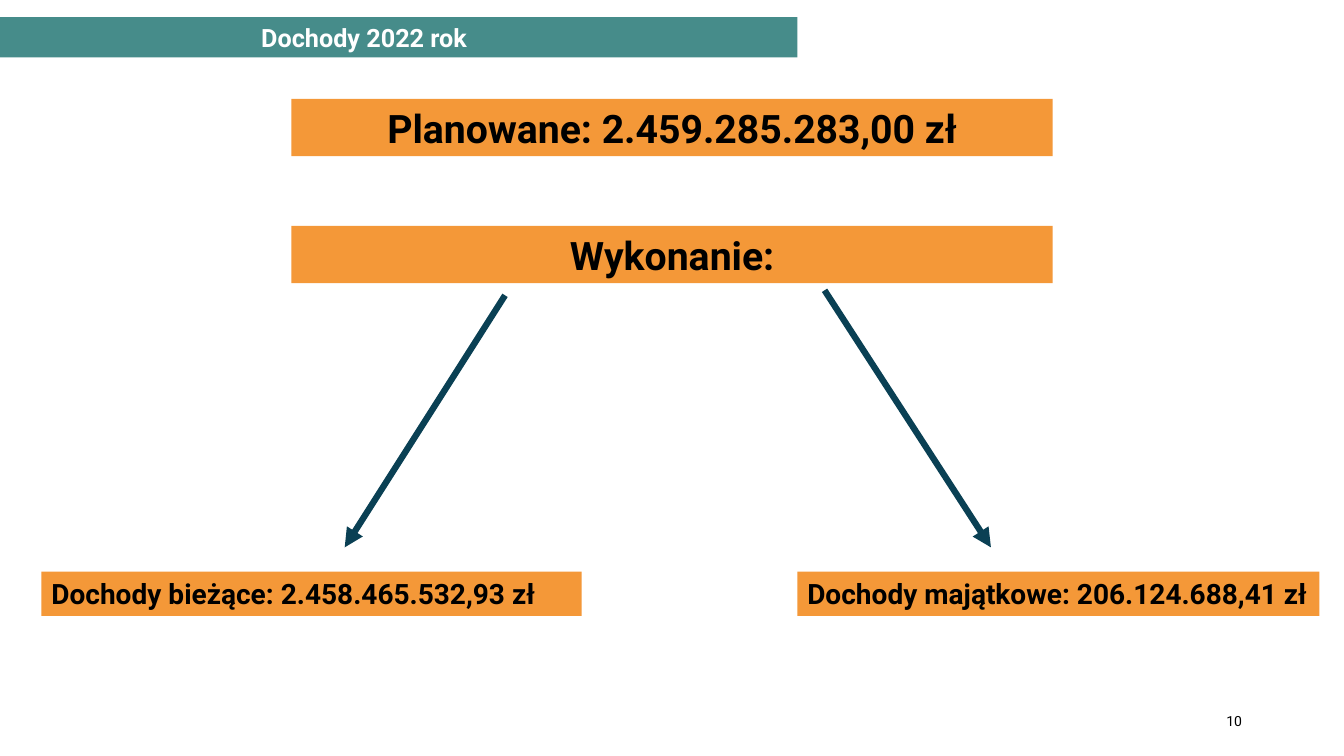
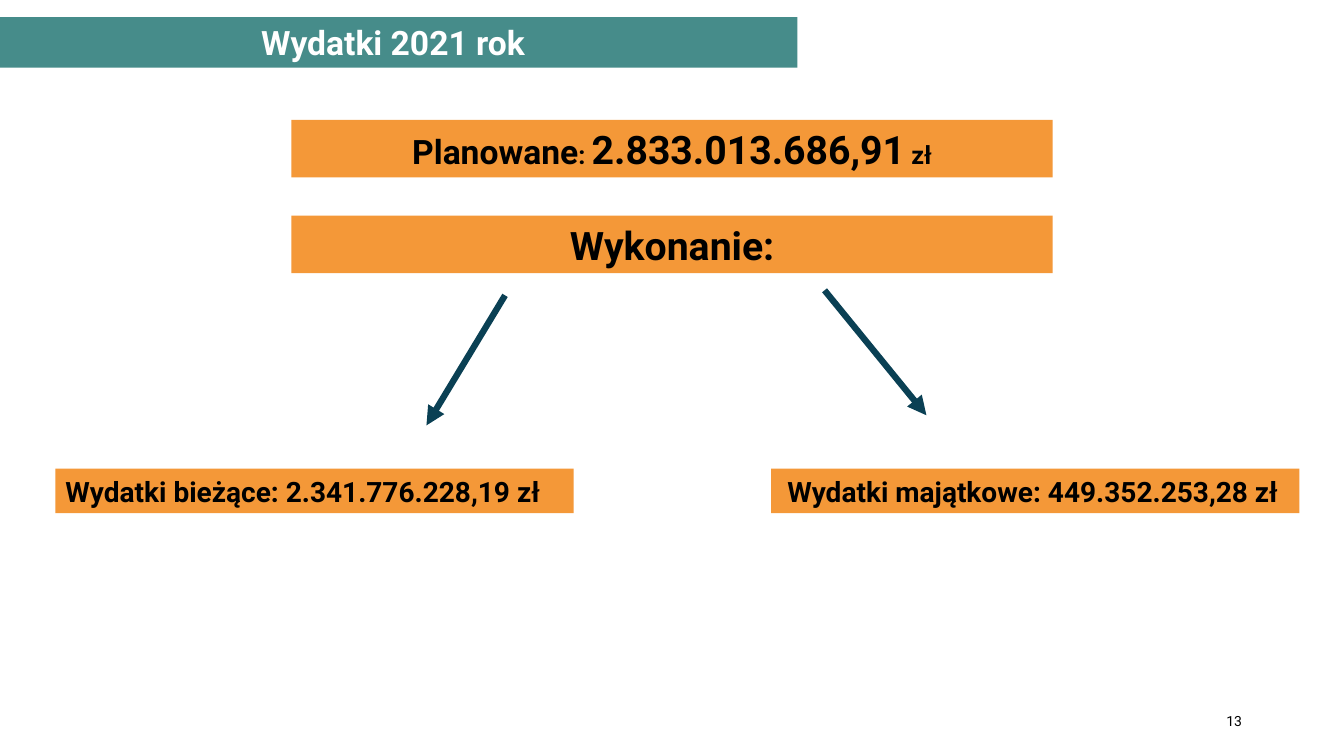
from dataclasses import dataclass

from lxml import etree
from pptx import Presentation
from pptx.dml.color import RGBColor
from pptx.enum.shapes import MSO_CONNECTOR, MSO_SHAPE
from pptx.enum.text import MSO_ANCHOR, MSO_AUTO_SIZE, PP_ALIGN
from pptx.oxml.ns import qn
from pptx.util import Emu, Inches, Pt

TEAL = RGBColor(0x46, 0x8C, 0x8A)
ORANGE = RGBColor(0xF4, 0x98, 0x38)
NAVY = RGBColor(0x0A, 0x40, 0x54)
BLACK = RGBColor(0, 0, 0)
WHITE = RGBColor(255, 255, 255)
FONT = "Roboto"
LEFT, CENTER, RIGHT = PP_ALIGN.LEFT, PP_ALIGN.CENTER, PP_ALIGN.RIGHT
MIDDLE = MSO_ANCHOR.MIDDLE
NO_AUTO_SIZE = MSO_AUTO_SIZE.NONE
RECTANGLE = MSO_SHAPE.RECTANGLE
STRAIGHT = MSO_CONNECTOR.STRAIGHT
TITLE_ONLY = 5

SLIDE_WIDTH, SLIDE_HEIGHT = Inches(13.33), Inches(7.5)
TITLE_INDENT = 2.59
BAR_WIDTH, BAR_HEIGHT = 56.64, 7.6
DETAIL_HEIGHT = 5.87
ARROW_STARTS = ((37.58, 39.07), (61.35, 38.4))


@dataclass
class Box:
    """An area in EMU whose inner areas are given as percentages of its size."""

    left: int
    top: int
    width: int
    height: int

    def point(self, x, y):
        """Return the position at the given percentages."""
        return Emu(int(self.left + self.width * x / 100)), Emu(int(self.top + self.height * y / 100))

    def area(self, x, y, width, height):
        """Return the inner box at the given percentages."""
        return Box(*self.point(x, y), Emu(int(self.width * width / 100)), Emu(int(self.height * height / 100)))

    def bounds(self):
        """Return left, top, width and height."""
        return self.left, self.top, self.width, self.height


def write_text(shape, text, size=20, color=BLACK, bold=True, align=LEFT, inset=0.1):
    """Fill a shape with a string or with (text, size) pieces."""
    frame = shape.text_frame
    frame.word_wrap = True
    frame.auto_size = NO_AUTO_SIZE
    frame.vertical_anchor = MIDDLE
    frame.margin_left = Inches(inset)
    frame.margin_right = Inches(0.1 if align != LEFT else 0.02)
    paragraph = frame.paragraphs[0]
    paragraph.alignment = align
    for piece, piece_size in [(text, size)] if isinstance(text, str) else text:
        run = paragraph.add_run()
        run.text = piece
        run.font.name = FONT
        run.font.size = Pt(piece_size)
        run.font.bold = bold
        run.font.color.rgb = color


def add_title(slide, box, text, size):
    """Turn the title placeholder into the teal band."""
    title = slide.shapes.title
    title.left, title.top, title.width, title.height = box.bounds()
    title.fill.solid()
    title.fill.fore_color.rgb = TEAL
    write_text(title, text, size=size, color=WHITE, inset=TITLE_INDENT)


def add_bar(slide, box, text, **text_format):
    """Add an orange bar with text."""
    bar = slide.shapes.add_shape(RECTANGLE, *box.bounds())
    bar.shadow.inherit = False
    bar.fill.solid()
    bar.fill.fore_color.rgb = ORANGE
    bar.line.fill.background()
    write_text(bar, text, **text_format)


def add_arrow(slide, start, end):
    """Add a thick navy arrow between two positions."""
    arrow = slide.shapes.add_connector(STRAIGHT, *start, *end)
    arrow.line.color.rgb = NAVY
    arrow.line.width = Pt(4.5)
    properties = arrow.element.spPr
    etree.SubElement(properties.find(qn("a:ln")), qn("a:tailEnd"), type="triangle")
    etree.SubElement(properties, qn("a:effectLst"))


def add_page_number(slide, box, number):
    """Add the page number at the lower right."""
    text_box = slide.shapes.add_textbox(*box.bounds())
    write_text(text_box, number, size=10, bold=False, align=RIGHT)


def add_breakdown(slide, box, bars, details, details_top, arrow_ends):
    """Add the stacked bars and the arrows to their two details."""
    for top, text in bars:
        bar_box = box.area((100 - BAR_WIDTH) / 2, top, BAR_WIDTH, BAR_HEIGHT)
        add_bar(slide, bar_box, text, size=28, align=CENTER)
    for left, width, text, inset in details:
        add_bar(slide, box.area(left, details_top, width, DETAIL_HEIGHT), text, inset=inset)
    for start, end in zip(ARROW_STARTS, arrow_ends):
        add_arrow(slide, box.point(*start), box.point(*end))


def add_budget_slide(presentation, title, title_size, title_height, number, **breakdown):
    """Add one slide with title band, breakdown and page number."""
    slide = presentation.slides.add_slide(presentation.slide_layouts[TITLE_ONLY])
    page = Box(0, 0, SLIDE_WIDTH, SLIDE_HEIGHT)
    add_title(slide, page.area(0, 2.27, 59.33, title_height), title, title_size)
    add_breakdown(slide, page, **breakdown)
    add_page_number(slide, page.area(70.65, 92.67, 22.5, 5.33), number)


def main():
    """Build and save the presentation."""
    presentation = Presentation()
    presentation.slide_width, presentation.slide_height = SLIDE_WIDTH, SLIDE_HEIGHT
    add_budget_slide(
        presentation, "Dochody 2022 rok", 18, 5.33, "10",
        bars=[(13.07, "Planowane: 2.459.285.283,00 zł"), (29.87, "Wykonanie:")],
        details=[
            (3.08, 40.2, "Dochody bieżące: 2.458.465.532,93 zł", 0.1),
            (59.33, 38.85, "Dochody majątkowe: 206.124.688,41 zł", 0.1),
        ],
        details_top=75.6,
        arrow_ends=[(25.65, 72.4), (73.73, 72.4)],
    )
    planned = [("Planowane", 24), (": ", 18), ("2.833.013.686,91", 28), (" zł", 18)]
    add_budget_slide(
        presentation, "Wydatki 2021 rok", 24, 6.67, "13",
        bars=[(15.87, planned), (28.53, "Wykonanie:")],
        details=[
            (4.13, 38.55, "Wydatki bieżące: 2.341.776.228,19 zł", 0.1),
            (57.38, 39.3, "Wydatki majątkowe: 449.352.253,28 zł", 0.16),
        ],
        details_top=62,
        arrow_ends=[(31.73, 56.27), (68.93, 54.93)],
    )
    presentation.save("out.pptx")


if __name__ == "__main__":
    main()
